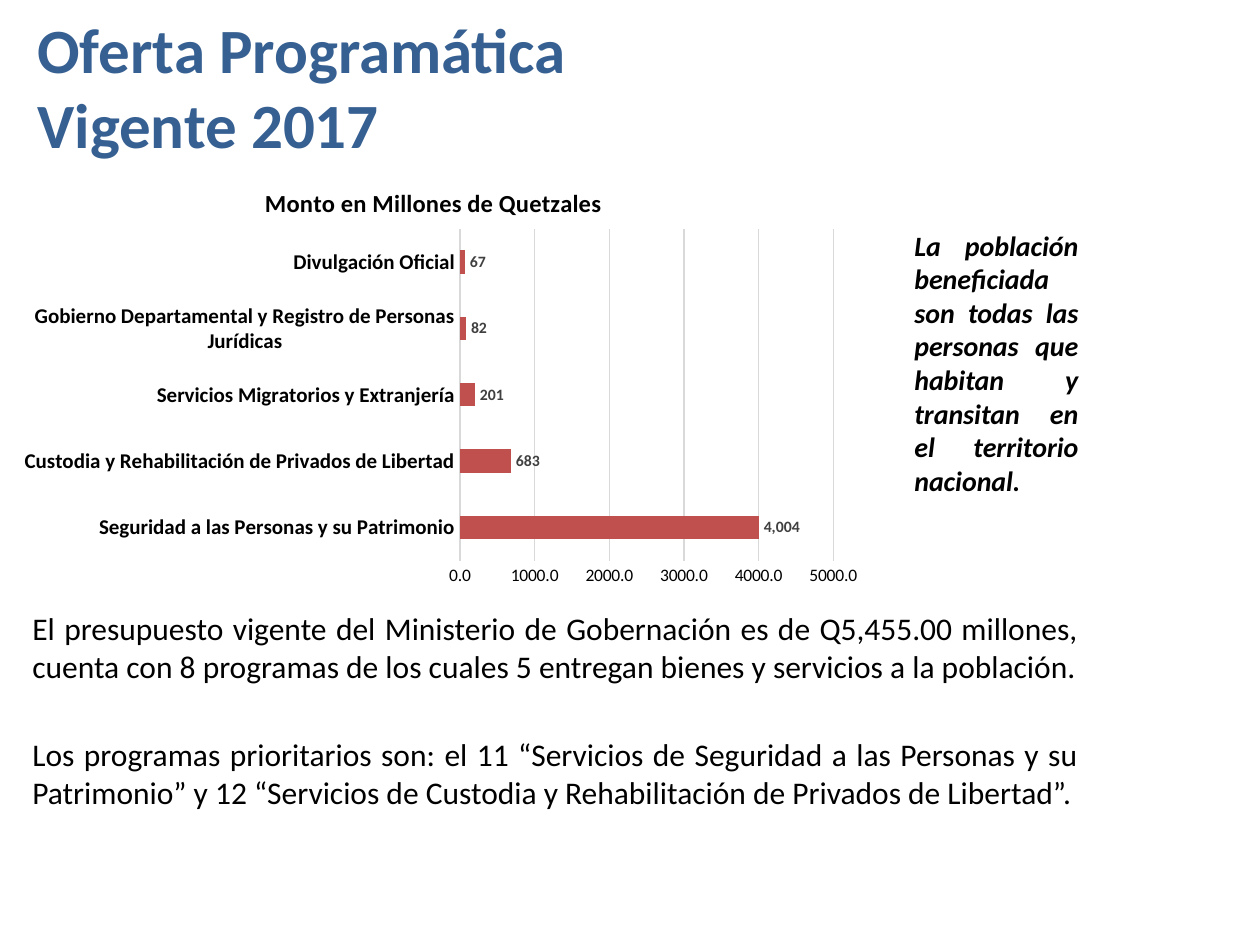
from dataclasses import dataclass

from lxml import etree
from pptx import Presentation
from pptx import util as u
from pptx.chart import data
from pptx.dml import color
from pptx.enum import chart as c, text
from pptx.oxml import ns

PX = u.Inches(1) / 126
BODY = [
    "El presupuesto vigente del Ministerio de Gobernación es de Q5,455.00 millones, "
    "cuenta con 8 programas de los cuales 5 entregan bienes y servicios a la población.",
    "Los programas prioritarios son: el 11 “Servicios de Seguridad a las Personas y su "
    "Patrimonio” y 12 “Servicios de Custodia y Rehabilitación de Privados de Libertad”.",
]
BENEFICIARIES = ("La población beneficiada son todas las personas que habitan "
                 "y transitan en el territorio nacional.")
PROGRAMMES = {
    "Seguridad a las Personas y su Patrimonio": 4004,
    "Custodia y Rehabilitación de Privados de Libertad": 683,
    "Servicios Migratorios y Extranjería": 201,
    "Gobierno Departamental y Registro de Personas Jurídicas": 82,
    "Divulgación Oficial": 67,
}


@dataclass(frozen=True)
class Theme:
    font: str = "Calibri"
    title: str = "376092"
    ink: str = "000000"
    bar: str = "C0504D"
    label: str = "404040"
    grid: str = "D9D9D9"
    title_size: int = 36
    body_size: int = 18
    side_size: int = 16
    chart_title_size: int = 14
    category_size: int = 12
    axis_size: int = 10
    label_size: int = 9


def emu(*lengths):
    return [round(length * PX) for length in lengths]


def set_all(target, values):
    for name, value in values.items():
        setattr(target, name, value)


def set_layout(parent, index, **fractions):
    """Place a chart part by fractions of the chart's size."""
    for old in parent.findall(ns.qn("c:layout")):
        parent.remove(old)
    layout = etree.Element(ns.qn("c:layout"))
    manual = etree.SubElement(layout, ns.qn("c:manualLayout"))
    if "w" in fractions:
        etree.SubElement(manual, ns.qn("c:layoutTarget"), val="inner")
    for side in ("x", "y"):
        etree.SubElement(manual, ns.qn(f"c:{side}Mode"), val="edge")
    for name, value in fractions.items():
        etree.SubElement(manual, ns.qn(f"c:{name}"), val=str(value))
    parent.insert(index, layout)


class SlideBuilder:
    def __init__(self, slide, theme):
        self.slide, self.theme = slide, theme

    def style(self, font, size, rgb, **flags):
        set_all(font, {"name": self.theme.font, "size": u.Pt(size), **flags})
        font.color.rgb = color.RGBColor.from_string(rgb)

    def line(self, line_format):
        line_format.color.rgb = color.RGBColor.from_string(self.theme.grid)
        line_format.width = u.Pt(0.75)

    def text(self, box, paragraphs, size, rgb, align=text.PP_ALIGN.JUSTIFY,
             frame_format=None, gap=0, **flags):
        frame = self.slide.shapes.add_textbox(*emu(*box)).text_frame
        set_all(frame, {"word_wrap": True, **(frame_format or {})})
        for index, words in enumerate(paragraphs):
            paragraph = frame.add_paragraph() if index else frame.paragraphs[0]
            paragraph.alignment = align
            if index:
                paragraph.space_before = u.Pt(gap)
            run = paragraph.add_run()
            run.text = words
            self.style(run.font, size, rgb, **flags)

    def bar_chart(self, box, title, values):
        theme = self.theme
        chart_data = data.CategoryChartData()
        chart_data.categories = list(values)
        chart_data.add_series("Series 1", list(values.values()))
        chart = self.slide.shapes.add_chart(
            c.XL_CHART_TYPE.BAR_CLUSTERED, *emu(*box), chart_data).chart
        chart.has_legend = False
        self.style(chart.font, theme.axis_size, theme.ink)

        # Title and plot position
        paragraph = chart.chart_title.text_frame.paragraphs[0]
        run = paragraph.add_run()
        run.text = title
        self.style(run.font, theme.chart_title_size, theme.ink, bold=True)
        set_layout(chart.chart_title.element, 1, x=0.3, y=0.05)
        plot_area = chart.element.find(".//" + ns.qn("c:plotArea"))
        set_layout(plot_area, 0, x=0.53, y=0.16, w=0.43, h=0.77)

        # Axes
        category, value = chart.category_axis, chart.value_axis
        for axis in (category, value):
            axis.major_tick_mark = axis.minor_tick_mark = c.XL_TICK_MARK.NONE
        self.style(category.tick_labels.font, theme.category_size, theme.ink, bold=True)
        self.line(category.format.line)
        set_all(value, {"minimum_scale": 0, "maximum_scale": 5000,
                        "major_unit": 1000, "has_major_gridlines": True})
        set_all(value.tick_labels, {"number_format": "0.0",
                                    "number_format_is_linked": False})
        self.style(value.tick_labels.font, theme.axis_size, theme.ink, bold=False)
        self.line(value.major_gridlines.format.line)
        value.format.line.fill.background()

        # Bars and their labels
        plot = chart.plots[0]
        set_all(plot, {"gap_width": 182, "vary_by_categories": False})
        series = plot.series[0]
        series.format.fill.solid()
        series.format.fill.fore_color.rgb = color.RGBColor.from_string(theme.bar)
        labels = series.data_labels
        set_all(labels, {"show_value": True, "number_format": "#,##0",
                         "number_format_is_linked": False,
                         "position": c.XL_LABEL_POSITION.OUTSIDE_END})
        self.style(labels.font, theme.label_size, theme.label, bold=True)


def main():
    presentation = Presentation()
    presentation.slide_width, presentation.slide_height = emu(1260, 945)
    slide = presentation.slides.add_slide(presentation.slide_layouts[6])
    theme = Theme()
    builder = SlideBuilder(slide, theme)

    # Heading
    builder.text((25, 3, 656, 166), ["Oferta Programática Vigente 2017"],
                 theme.title_size, theme.title, text.PP_ALIGN.LEFT,
                 {"vertical_anchor": text.MSO_ANCHOR.MIDDLE}, bold=True)

    # Budget and priority programmes
    builder.text((20, 603, 1071, 312), BODY, theme.body_size, theme.ink, gap=28.8)

    # Beneficiaries beside the chart
    builder.text((902, 222, 189, 285), [BENEFICIARIES], theme.side_size, theme.ink,
                 frame_format={"auto_size": text.MSO_AUTO_SIZE.SHAPE_TO_FIT_TEXT},
                 bold=True, italic=True)

    # Budget by programme
    builder.bar_chart((0, 160, 868, 431), "Monto en Millones de Quetzales", PROGRAMMES)

    presentation.save("out.pptx")


if __name__ == "__main__":
    main()
